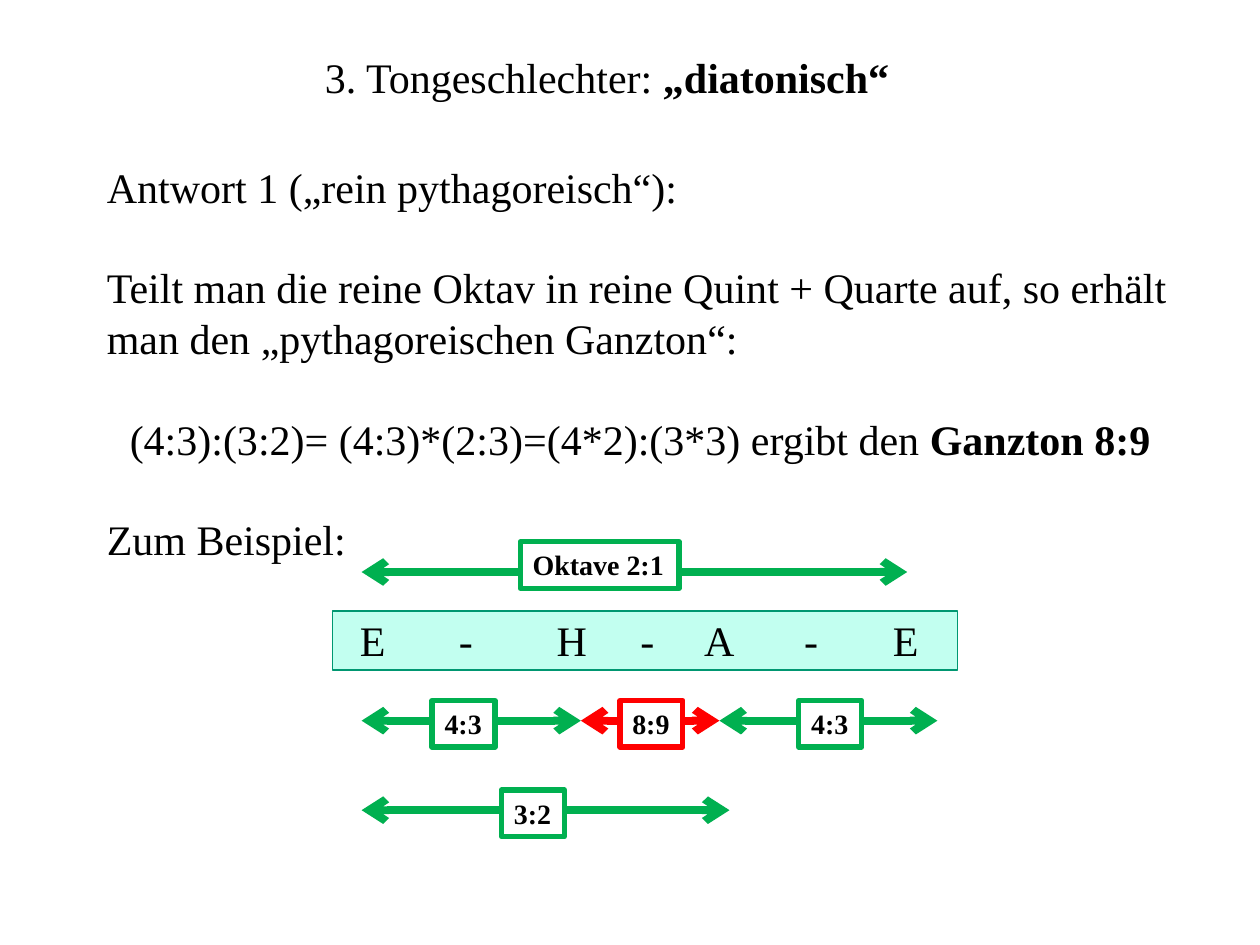
from dataclasses import dataclass

from lxml import etree
from pptx import Presentation
from pptx import util as u
from pptx.dml.color import RGBColor
from pptx.enum import shapes, text
from pptx.oxml import ns


@dataclass(frozen=True)
class Theme:
    font: str = "Times New Roman"
    ink: str = "000000"
    paper: str = "FFFFFF"
    pure: str = "00B050"
    whole_tone: str = "FF0000"
    bar_fill: str = "C2FFF0"
    bar_line: str = "009771"
    body_size: float = 24
    label_size: float = 16
    leading: float = 1.2
    arrow_width: float = 4.5
    label_border: float = 3


@dataclass(frozen=True)
class Interval:
    ratio: str
    start: float
    end: float
    y: float
    label_left: float
    label_top: float
    label_width: float = 0.5
    color: str = Theme.pure


@dataclass(frozen=True)
class Passage:
    plain: str
    bold: str = ""
    centered: bool = False
    gap: bool = True
    tabs: tuple[float, ...] = ()


THEME = Theme()
LABEL_HEIGHT = 0.37
E_LOW, H, A = 2.87, 4.61, 5.71
FOURTH_ROW = 5.72

TITLE = [Passage("3. Tongeschlechter: ", "„diatonisch“", gap=False)]
NOTES = ("E", "-", "H", "-", "A", "-", "E")
NOTE_TABS = (2.11, 2.85, 3.69, 4.29, 4.86, 5.59, 6.34)
BODY = [
    Passage("Antwort 1 („rein pythagoreisch“):", gap=False),
    Passage("Teilt man die reine Oktav in reine Quint + Quarte auf, so erhält "
            "man den „pythagoreischen Ganzton“:"),
    Passage("(4:3):(3:2)= (4:3)*(2:3)=(4*2):(3*3) ergibt den ", "Ganzton 8:9",
            centered=True),
    Passage("Zum Beispiel:"),
    Passage("".join("\t" + note for note in NOTES), tabs=NOTE_TABS),
]
INTERVALS = [
    Interval("Oktave 2:1", E_LOW, 7.2, 4.54, 4.13, 4.3, label_width=1.26),
    Interval("4:3", E_LOW, H, FOURTH_ROW, 3.43, 5.56),
    Interval("4:3", A, 7.44, FOURTH_ROW, 6.34, 5.56),
    Interval("3:2", E_LOW, 5.79, 6.43, 3.98, 6.27),
    Interval("8:9", H, A, FOURTH_ROW, 4.92, 5.56, color=THEME.whole_tone),
]


def rgb(color: str) -> RGBColor:
    return RGBColor.from_string(color)


def style_paragraph(paragraph, size: float, bold: bool = False) -> None:
    paragraph.line_spacing = u.Pt(size * THEME.leading)
    font = paragraph.font
    font.name, font.size, font.bold = THEME.font, u.Pt(size), bold
    font.color.rgb = rgb(THEME.ink)


def add_tabs(paragraph, positions: tuple[float, ...]) -> None:
    properties = paragraph._p.get_or_add_pPr()
    tab_list = etree.SubElement(properties, ns.qn("a:tabLst"))
    for position in positions:
        etree.SubElement(tab_list, ns.qn("a:tab"),
                         pos=str(u.Inches(position)), algn="ctr")


def add_passages(slide, passages: list[Passage], left: float, top: float,
                 width: float, height: float, wrap: bool) -> None:
    box = slide.shapes.add_textbox(*map(u.Inches, (left, top, width, height)))
    frame = box.text_frame
    frame.word_wrap = wrap
    frame.auto_size = text.MSO_AUTO_SIZE.SHAPE_TO_FIT_TEXT
    for index, passage in enumerate(passages):
        paragraph = frame.add_paragraph() if index else frame.paragraphs[0]
        if passage.tabs:
            add_tabs(paragraph, passage.tabs)
        paragraph.alignment = (text.PP_ALIGN.CENTER if passage.centered
                               else text.PP_ALIGN.LEFT)
        if passage.gap:
            paragraph.space_before = u.Pt(THEME.body_size * THEME.leading)
        style_paragraph(paragraph, THEME.body_size)
        paragraph.add_run().text = passage.plain
        if passage.bold:
            emphasis = paragraph.add_run()
            emphasis.text = passage.bold
            emphasis.font.bold = True


def add_rectangle(slide, left: float, top: float, width: float, height: float,
                  fill: str, line: str, line_width: float):
    rectangle = slide.shapes.add_shape(
        shapes.MSO_SHAPE.RECTANGLE,
        *map(u.Inches, (left, top, width, height)))
    rectangle.shadow.inherit = False
    rectangle.fill.solid()
    rectangle.fill.fore_color.rgb = rgb(fill)
    rectangle.line.color.rgb = rgb(line)
    rectangle.line.width = u.Pt(line_width)
    return rectangle


def add_interval(slide, interval: Interval) -> None:
    arrow = slide.shapes.add_connector(
        shapes.MSO_CONNECTOR.STRAIGHT,
        *map(u.Inches, (interval.start, interval.y, interval.end, interval.y)))
    arrow.line.color.rgb = rgb(interval.color)
    arrow.line.width = u.Pt(THEME.arrow_width)
    for end in ("a:headEnd", "a:tailEnd"):
        etree.SubElement(arrow.line._get_or_add_ln(), ns.qn(end), type="arrow")
    etree.SubElement(arrow._element.spPr, ns.qn("a:effectLst"))

    label = add_rectangle(slide, interval.label_left, interval.label_top,
                          interval.label_width, LABEL_HEIGHT, THEME.paper,
                          interval.color, THEME.label_border)
    frame = label.text_frame
    frame.word_wrap = False
    frame.auto_size = text.MSO_AUTO_SIZE.SHAPE_TO_FIT_TEXT
    frame.vertical_anchor = text.MSO_ANCHOR.TOP
    paragraph = frame.paragraphs[0]
    paragraph.text = interval.ratio
    paragraph.alignment = text.PP_ALIGN.LEFT
    style_paragraph(paragraph, THEME.label_size, bold=True)


def main() -> None:
    presentation = Presentation()
    presentation.slide_width = u.Inches(10)
    presentation.slide_height = u.Inches(7.5)
    slide = presentation.slides.add_slide(presentation.slide_layouts[6])

    add_passages(slide, TITLE, 2.48, 0.36, 4.72, 0.5, wrap=False)
    add_rectangle(slide, 2.64, 4.85, 4.96, 0.47, THEME.bar_fill,
                  THEME.bar_line, 1)
    add_passages(slide, BODY, 0.75, 1.23, 8.66, 5.01, wrap=True)
    for interval in INTERVALS:
        add_interval(slide, interval)

    presentation.save("out.pptx")


if __name__ == "__main__":
    main()
